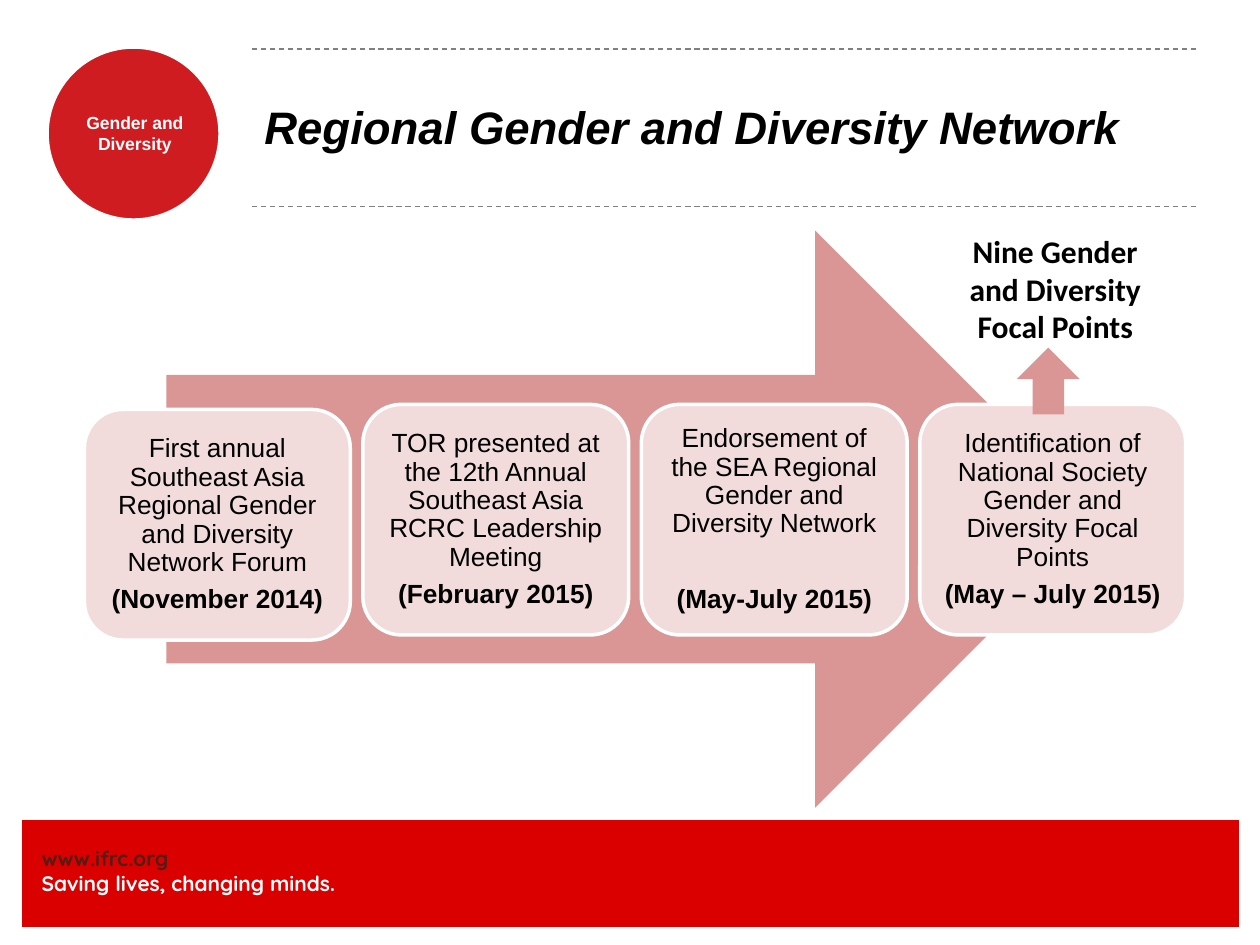
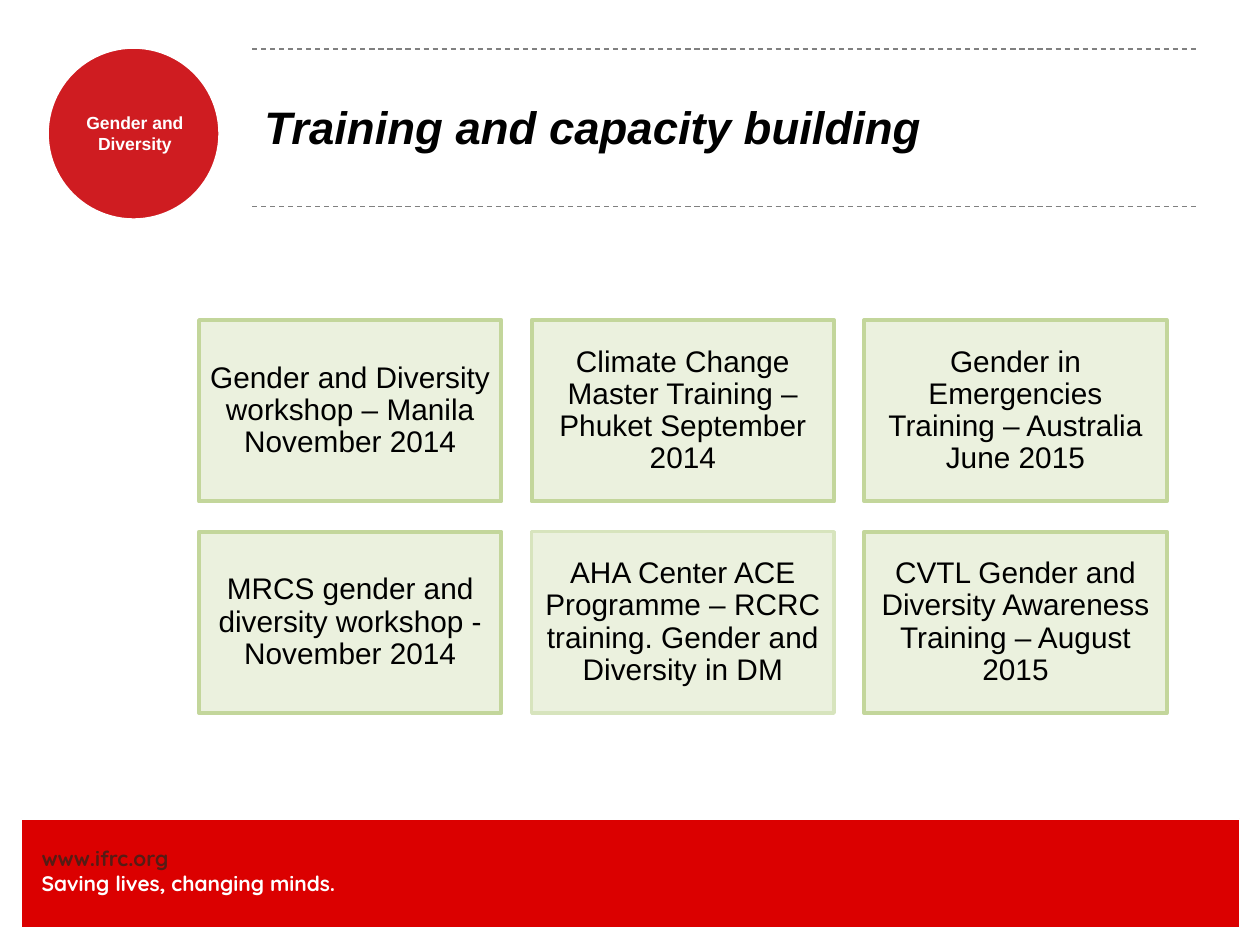
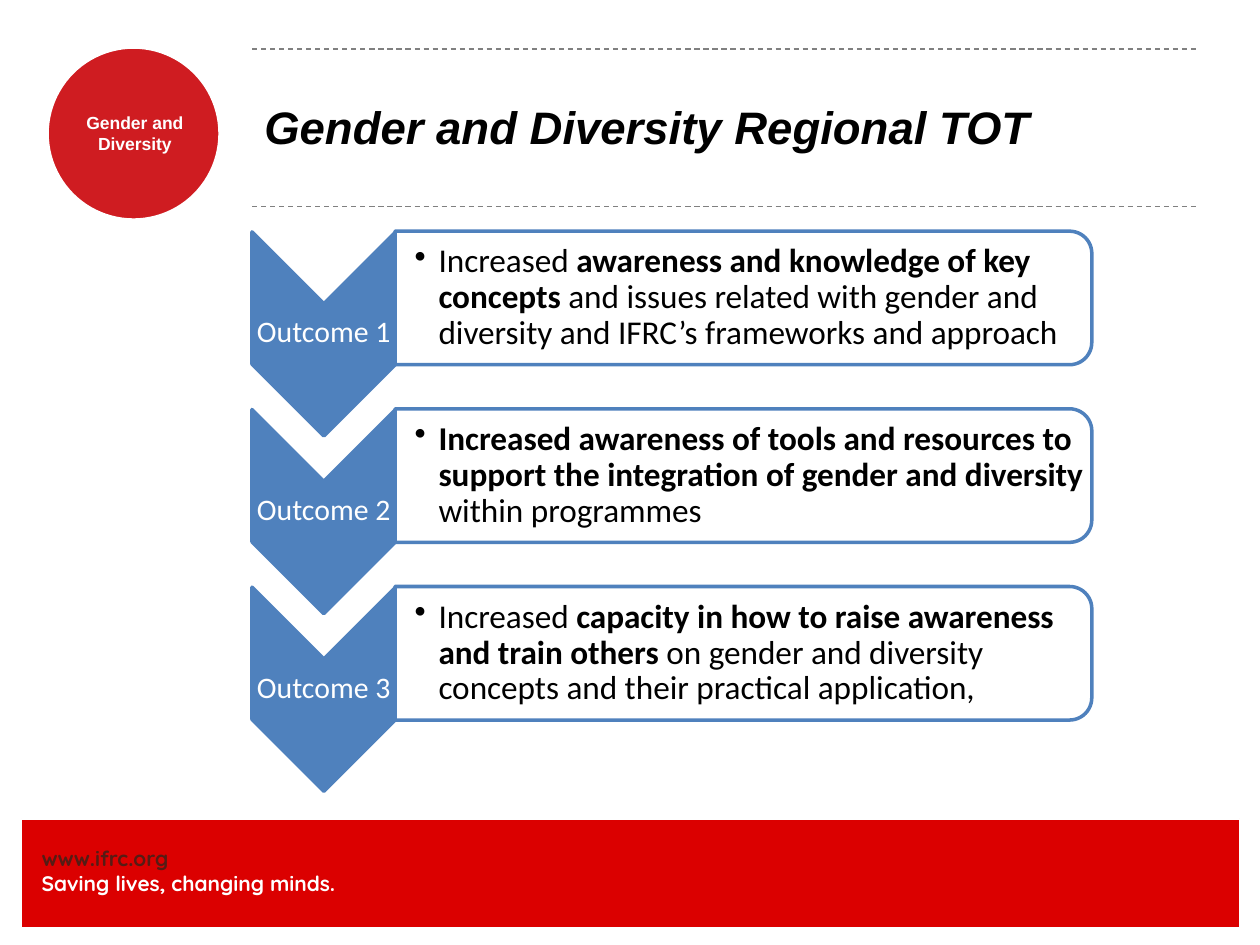
from lxml import etree
from pptx import Presentation, util as u
from pptx.dml.color import RGBColor
from pptx.enum import dml, shapes, text
from pptx.oxml.ns import qn

INK = {
    "band": "DB0000", "disc": "CF1C21", "link": "551C15", "white": "FFFFFF",
    "black": "000000", "rule": "808080", "arrow": "D99694", "step": "F2DCDB",
    "cell": "EBF1DE", "edge": "C3D69B", "pale": "D7E4BD", "blue": "4F81BD",
}
KIND = shapes.MSO_SHAPE
MID = {"vertical_anchor": text.MSO_ANCHOR.MIDDLE}
MIX = {"alignment": text.PP_ALIGN.CENTER}
SNUG = {**MIX, "line_spacing": 0.9, "space_after": u.Pt(5)}
STEPS = [
    ("First annual Southeast Asia Regional Gender and Diversity Network Forum",
     "(November 2014)", 3.25, 5),
    ("TOR presented at the 12th Annual Southeast Asia RCRC Leadership Meeting",
     "(February 2015)", 3.21, 5),
    ("Endorsement of the SEA Regional Gender and Diversity Network",
     "(May-July 2015)", 3.21, 27),
    ("Identification of National Society Gender and Diversity Focal Points",
     "(May – July 2015)", 3.21, 5),
]
EVENTS = [
    "Gender and Diversity workshop – Manila November 2014",
    "Climate Change Master Training – Phuket September 2014",
    "Gender in Emergencies Training – Australia June 2015",
    "MRCS gender and diversity workshop - November 2014",
    "AHA Center ACE Programme – RCRC training. Gender and Diversity in DM",
    "CVTL Gender and Diversity Awareness Training – August 2015",
]
GOALS = [
    [("Increased ", False), ("awareness and knowledge of key concepts", True),
     (" and issues related with gender and diversity and IFRC’s frameworks and approach", False)],
    [("Increased awareness of tools and resources to support the integration "
      "of gender and diversity", True), (" within programmes", False)],
    [("Increased ", False), ("capacity in how to raise awareness and train others ", True),
     ("on gender and diversity concepts and their practical application,", False)],
]


def tint(name):
    """Return the named colour."""
    return RGBColor.from_string(INK[name])


def apply(item, form):
    """Set every attribute in form on item."""
    for key, value in form.items():
        setattr(item, key, value)


def look(size, name="Arial", **more):
    """Return the format values of a font."""
    return {"size": u.Pt(size), "name": name, **more}


def pads(left, rest):
    """Return the margins of a text frame."""
    form = {f"margin_{side}": u.Inches(rest) for side in ("top", "right", "bottom")}
    return {"margin_left": u.Inches(left), **form}


def draw(slide, kind, at, fill, line=None, width=1):
    """Add a preset shape with a fill and an optional outline."""
    shape = slide.shapes.add_shape(kind, *map(u.Inches, at))
    shape.shadow.inherit = False
    shape.fill.solid()
    shape.fill.fore_color.rgb = tint(fill)
    if line:
        shape.line.color.rgb = tint(line)
        shape.line.width = u.Pt(width)
    else:
        shape.line.fill.background()
    return shape


def box(slide, at):
    """Add an empty text box."""
    return slide.shapes.add_textbox(*map(u.Inches, at))


def para(shape, runs, font, ink="black", form=None, first=True):
    """Write one paragraph of (words, bold) runs in a shape."""
    frame = shape.text_frame
    frame.word_wrap = True
    line = frame.paragraphs[0] if first else frame.add_paragraph()
    apply(line, form or {})
    for words, bold in runs:
        run = line.add_run()
        run.text = words
        apply(run.font, {**font, "bold": bold})
        run.font.color.rgb = tint(ink)
    return line


def rule(slide, top):
    """Add a dashed line across the title area."""
    line = slide.shapes.add_connector(
        shapes.MSO_CONNECTOR.STRAIGHT, *map(u.Inches, (2, top, 9.5, top)))
    line.line.color.rgb = tint("rule")
    apply(line.line, {"width": u.Pt(0.75), "dash_style": dml.MSO_LINE.DASH})
    etree.SubElement(line._element.spPr, qn("a:effectLst"))


def base(deck, title):
    """Add a slide with the shared band, disc, rules and title."""
    slide = deck.slides.add_slide(deck.slide_layouts[6])
    draw(slide, KIND.RECTANGLE, (0.17, 6.5, 9.67, 0.86), "band", "white", 0.75)
    foot = box(slide, (0.33, 6.71, 3.42, 0.4))
    apply(foot.text_frame, pads(0, 0))
    quick = look(12, "Quicksand")
    para(foot, [("www.ifrc.org", True)], quick, "link")
    para(foot, [("Saving lives, changing minds.", True)], quick, "white", first=False)
    draw(slide, KIND.OVAL, (0.37, 0.37, 1.38, 1.38), "disc", "white", 2.5)
    tag = box(slide, (0.56, 0.89, 1.02, 0.34))
    apply(tag.text_frame, pads(0, 0))
    para(tag, [("Gender and Diversity", True)], look(10), "white", MIX)
    for top in (0.39, 1.64):
        rule(slide, top)
    head = box(slide, (2, 0.38, 7.5, 1.25))
    apply(head.text_frame, MID)
    para(head, [(title, True)], look(26, italic=True))
    return slide


def step(slide, left, top, words, date, gap):
    """Add one dated stage of the network."""
    card = draw(slide, KIND.ROUNDED_RECTANGLE, (left, top, 2.11, 1.83), "step", "white", 2)
    apply(card.text_frame, {**MID, **pads(0.06, 0.06)})
    para(card, [(words, False)], look(15), form={**SNUG, "space_after": u.Pt(gap)})
    para(card, [(date, True)], look(15), form=SNUG, first=False)


def event(slide, left, top, words, edge, width):
    """Add one training card."""
    card = draw(slide, KIND.RECTANGLE, (left, top, 2.4, 1.44), "cell", edge, width)
    apply(card.text_frame, {**MID, **pads(0.07, 0.07)})
    para(card, [(words, False)], look(17), form=SNUG)


def goal(slide, top, label, runs):
    """Add one outcome with its chevron and bullet text."""
    mark = draw(slide, KIND.CHEVRON, (1.76, top + 0.25, 1.62, 1.14), "blue", "blue", 2)
    name = box(slide, (2, top + 0.57, 1.14, 0.49))
    apply(name.text_frame, {**MID, **pads(0.01, 0.01)})
    para(name, [(label, False)], look(17, "Calibri"), "white", SNUG)
    panel = draw(slide, KIND.ROUND_2_SAME_RECTANGLE,
                 (5.37, top - 2.23, 1.06, 5.53), "white", "blue", 2)
    mark.rotation = panel.rotation = 90
    body = box(slide, (3.14, top + 0.06, 5.48, 0.95))
    apply(body.text_frame, {**MID, **pads(0.15, 0.01)})
    line = para(body, runs, look(19, "Calibri"), form={"line_spacing": 0.9})
    prop = line._p.get_or_add_pPr()
    prop.set("marL", str(u.Inches(0.19)))
    prop.set("indent", str(u.Inches(-0.19)))
    etree.SubElement(prop, qn("a:buChar")).set("char", "•")


def main():
    """Build the three slides and save them."""
    deck = Presentation()
    apply(deck, {"slide_width": u.Inches(10), "slide_height": u.Inches(7.5)})

    slide = base(deck, "Regional Gender and Diversity Network")
    draw(slide, KIND.RIGHT_ARROW, (1.32, 1.83, 7.44, 4.58), "arrow")
    for i, (words, date, top, gap) in enumerate(STEPS):
        step(slide, 0.67 + i * 2.21, top, words, date, gap)
    draw(slide, KIND.UP_ARROW, (8.07, 2.76, 0.5, 0.53), "arrow")
    note = box(slide, (7.5, 1.79, 1.75, 1.01))
    para(note, [("Nine Gender and Diversity Focal Points", True)],
         look(18, "Calibri"), form=MIX)

    slide = base(deck, "Training and capacity building")
    for i, words in enumerate(EVENTS):
        row, col = divmod(i, 3)
        edge, width = ("pale", 2) if i == 4 else ("edge", 2.25)
        event(slide, 1.58 + col * 2.64, 2.54 + row * 1.68, words, edge, width)

    slide = base(deck, "Gender and Diversity Regional TOT")
    for i, runs in enumerate(GOALS):
        goal(slide, 1.83 + i * 1.41, f"Outcome {i + 1}", runs)

    deck.save("out.pptx")


if __name__ == "__main__":
    main()
